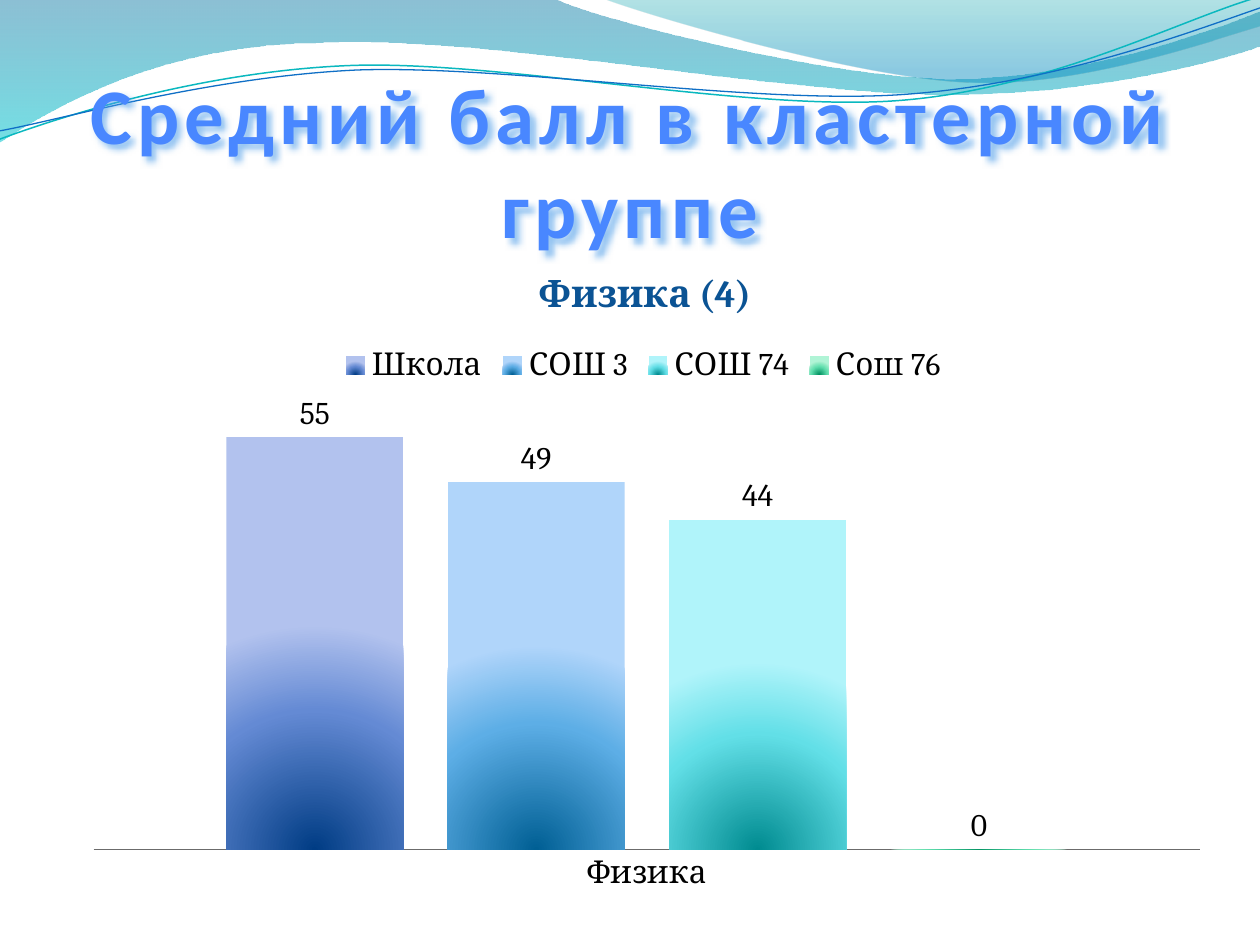
from lxml import etree
from pptx import Presentation
from pptx.chart.data import CategoryChartData
from pptx.dml.color import RGBColor
from pptx.enum.chart import (XL_CHART_TYPE, XL_LABEL_POSITION,
                             XL_LEGEND_POSITION, XL_TICK_MARK)
from pptx.enum.text import MSO_ANCHOR, MSO_AUTO_SIZE, PP_ALIGN
from pptx.oxml.ns import qn
from pptx.util import Pt

COLUMN = XL_CHART_TYPE.COLUMN_CLUSTERED
OUTSIDE = XL_LABEL_POSITION.OUTSIDE_END
TOP = XL_LEGEND_POSITION.TOP
NO_TICK = XL_TICK_MARK.NONE
BOTTOM = MSO_ANCHOR.BOTTOM
NO_FIT = MSO_AUTO_SIZE.NONE
CENTER = PP_ALIGN.CENTER

NS = 'xmlns:a="http://schemas.openxmlformats.org/drawingml/2006/main"'
DOWN = '<a:lin ang="5400000" scaled="1"/>'
ROUND = ('<a:path path="circle"><a:fillToRect l="50000" t="100000" '
         'r="50000" b="0"/></a:path>')

# Each wave starts at a point; then 2 numbers are a line, 6 a curve
BANDS = [
    ([(0, -0.7), (317, -0.7), (343, 12, 478, 45, 546, 45),
      (614, 45, 690, 19, 720, 6.5), (721, 26), (708, 32, 626, 55, 537, 54),
      (447, 54, 275, 20, 185, 24.5), (93, 25, 33, 60, -0.7, 81.4)],
     [(0, "0074A1", 45), (100, "00C6CF", 55)]),
    ([(345, -0.7), (367, 8, 491, 45, 554, 47), (616, 50, 692, 23, 720, 15),
      (720, 0)],
     [(0, "00A1A9", 30), (80, "008BBF", 45)]),
]
LINES = [
    ([(-1.4, 80), (33.6, 67, 114, 41, 199, 37.5),
      (284, 34, 427, 64, 513, 57.5), (600, 51, 675, 11, 718.5, -1.5)],
     "0AB8BF", 0.85),
    ([(-1.4, 75), (33, 69, 118, 44, 204, 40), (290, 37, 430, 60, 516, 54),
      (602, 48, 678, 19, 720, 4.5)], "0F6FC6", 0.75),
]
# Name, value, colours from the foot of the column outwards
SCORES = [
    ("Школа", 55, ("003C84", "648AD4", "B2C2EE")),
    ("СОШ 3", 49, ("005F94", "5DAEE6", "B0D5FA")),
    ("СОШ 74", 44, ("008B90", "62DFE7", "B0F4FA")),
    ("Сош 76", 0, ("009060", "62E0B0", "B0F4D6")),
]


def rgb(code):
    return RGBColor.from_string(code)


def blend(fill, root, stops, shade):
    """Give the first fill below root a gradient and return its element."""
    fill.solid()
    marks = "".join(
        f'<a:gs pos="{pos * 1000}"><a:srgbClr val="{code}">'
        f'<a:alpha val="{alpha * 1000}"/></a:srgbClr></a:gs>'
        for pos, code, alpha in stops)
    grad = etree.fromstring(f'<a:gradFill {NS} rotWithShape="1"><a:gsLst>{marks}'
                            f'</a:gsLst>{shade}</a:gradFill>')
    old = root.find(".//" + qn("a:solidFill"))
    old.getparent().replace(old, grad)
    return grad


def add_wave(slide, path, close):
    """Draw straight legs, then join each curve's three legs into one."""
    dots = [(seg[i] * 100, seg[i + 1] * 100)
            for seg in path for i in range(0, len(seg), 2)]
    pen = slide.shapes.build_freeform(*dots[0], scale=Pt(1) / 100)
    pen.add_line_segments(dots[1:], close=close)
    wave = pen.convert_to_shape()
    wave.shadow.inherit = False
    legs = iter(wave.element.findall(".//" + qn("a:lnTo")))
    for seg in path[1:]:
        leg = next(legs)
        if len(seg) == 6:
            curve = etree.Element(qn("a:cubicBezTo"))
            leg.addprevious(curve)
            for part in (leg, next(legs), next(legs)):
                curve.append(part[0])
                part.getparent().remove(part)
    return wave


def add_waves(slide, master):
    waves = []
    # Filled bands
    for path, stops in BANDS:
        band = add_wave(slide, path, True)
        blend(band.fill, band.element, stops, DOWN)
        band.line.fill.background()
        waves.append(band.element)
    # Thin lines
    for path, code, width in LINES:
        line = add_wave(slide, path, False)
        line.fill.background()
        line.line.color.rgb = rgb(code)
        line.line.width = Pt(width)
        waves.append(line.element)
    # The waves belong to the master, behind its placeholders
    for i, wave in enumerate(waves):
        wave.find(".//" + qn("p:cNvPr")).set("id", str(20 + i))
        master.shapes.element.insert(2 + i, wave)


def add_title(slide, left, top, width, height):
    title = slide.shapes.title
    title.left, title.top = Pt(left), Pt(top)
    title.width, title.height = Pt(width), Pt(height)
    frame = title.text_frame
    frame.text = "Средний балл в кластерной группе"
    frame.auto_size = NO_FIT
    frame.vertical_anchor = BOTTOM
    frame.margin_left = frame.margin_right = frame.margin_bottom = 0
    frame.margin_top = Pt(3.6)
    para = frame.paragraphs[0]
    para.alignment = CENTER
    font = para.runs[0].font
    font.name, font.size, font.bold = "Calibri", Pt(45), True

    # Letter spacing, gradient and outline
    props = para.runs[0]._r.get_or_add_rPr()
    props.set("spc", "300")
    grad = blend(font.fill, props,
                 [(10, "4987FF", 100), (75, "00539E", 100)], DOWN)
    grad.addprevious(etree.fromstring(
        f'<a:ln {NS} w="11430"><a:solidFill><a:srgbClr val="F4F5FA"/>'
        '</a:solidFill></a:ln>'))
    # Soft shadow
    title.element.spPr.append(etree.fromstring(
        f'<a:effectLst {NS}><a:outerShdw blurRad="50800" dist="39000" '
        'dir="2700000"><a:srgbClr val="4A9BE8"><a:alpha val="60000"/>'
        '</a:srgbClr></a:outerShdw></a:effectLst>'))


def place(part, **box):
    """Place a chart part by fractions of the chart's size."""
    layout = part.find(qn("c:layout"))
    if layout is None:
        layout = etree.Element(qn("c:layout"))
        ahead = [kid for kid in part
                 if kid.tag in (qn("c:tx"), qn("c:legendPos"))]
        if ahead:
            ahead[-1].addnext(layout)
        else:
            part.insert(0, layout)
    for kid in list(layout):
        layout.remove(kid)
    inner = etree.SubElement(layout, qn("c:manualLayout"))
    if "w" in box:
        etree.SubElement(inner, qn("c:layoutTarget")).set("val", "inner")
    for key in ("x", "y"):
        etree.SubElement(inner, qn(f"c:{key}Mode")).set("val", "edge")
    for key, share in box.items():
        etree.SubElement(inner, qn(f"c:{key}")).set("val", str(share))


def add_scores(slide, left, top, width, height):
    data = CategoryChartData()
    data.categories = ["Физика"]
    for name, score, _ in SCORES:
        data.add_series(name, [score])
    chart = slide.shapes.add_chart(COLUMN, Pt(left), Pt(top), Pt(width),
                                   Pt(height), data).chart
    chart.font.name, chart.font.size = "Cambria", Pt(18)
    chart.font.color.rgb = rgb("000000")

    # Heading and legend
    head = chart.chart_title
    head.include_in_layout = False
    head.text_frame.text = "Физика (4)"
    font = head.text_frame.paragraphs[0].runs[0].font
    font.name, font.size, font.bold = "Cambria", Pt(21.6), True
    font.color.rgb = rgb("0B5394")
    chart.has_legend = True
    chart.legend.position = TOP
    chart.legend.include_in_layout = False

    # Axes
    axis = chart.value_axis
    axis.visible = axis.has_major_gridlines = False
    axis.minimum_scale, axis.maximum_scale = 0, 60
    axis = chart.category_axis
    axis.major_tick_mark = axis.minor_tick_mark = NO_TICK
    axis.format.line.color.rgb = rgb("6B6B6B")
    axis.format.line.width = Pt(0.75)

    # Columns
    plot = chart.plots[0]
    plot.gap_width, plot.overlap = 150, -25
    plot.vary_by_categories = False
    for bar, (_, _, codes) in zip(plot.series, SCORES):
        stops = [(pos, code, 100) for pos, code in zip((0, 62, 100), codes)]
        blend(bar.format.fill, bar._element, stops, ROUND)
        bar.data_labels.show_value = True
        bar.data_labels.position = OUTSIDE

    # Places inside the chart
    root = chart.element
    place(root.find(".//" + qn("c:title")), x=0.4, y=0.01)
    place(root.find(".//" + qn("c:legend")), x=0.23, y=0.13)
    place(root.find(".//" + qn("c:plotArea")), x=0.02, y=0.22, w=0.96, h=0.69)


def main():
    deck = Presentation()
    deck.slide_width, deck.slide_height = Pt(720), Pt(540)
    slide = deck.slides.add_slide(deck.slide_layouts[5])
    add_waves(slide, deck.slide_master)
    add_title(slide, 36, 55.5, 648, 90)
    add_scores(slide, 40.3, 146.2, 658.8, 373)
    deck.save("out.pptx")


if __name__ == "__main__":
    main()
